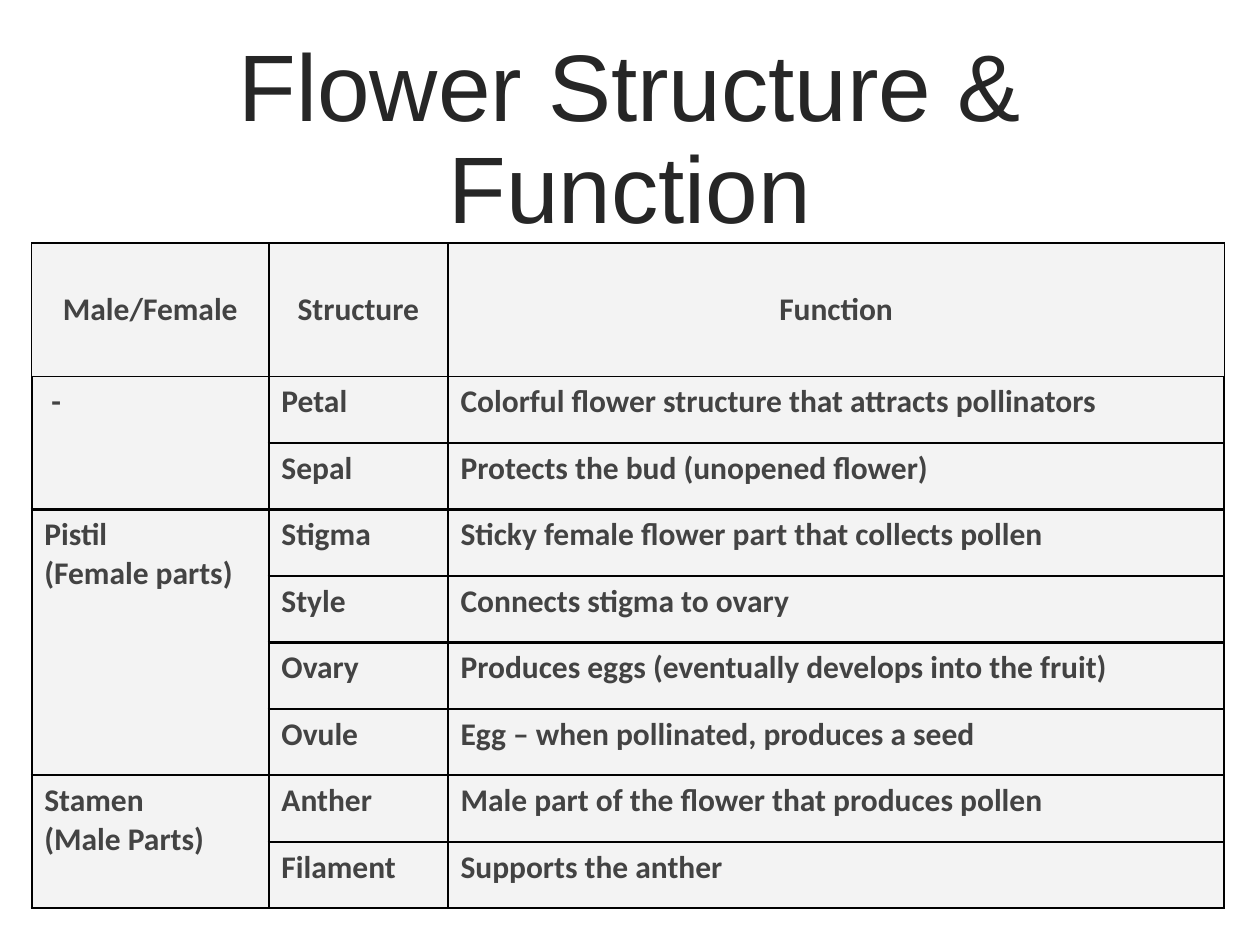
import pptx
import pptx.dml.color
import pptx.enum.text
import pptx.oxml
import pptx.oxml.ns
import pptx.util

Cm = pptx.util.Cm
Pt = pptx.util.Pt
ALIGN = pptx.enum.text.PP_ALIGN
ANCHOR = pptx.enum.text.MSO_ANCHOR

TITLE = {"name": "Arial", "size": Pt(54), "color": "262626"}
BODY = {"name": "Calibri", "size": Pt(18), "bold": True, "color": "434343"}
FILL, EDGE = "F3F3F3", "000000"
THIN, THICK = 1, 1.5

HEAD = ["Male/Female", "Structure", "Function"]
GROUPS = [
    (" -", [
        ("Petal", "Colorful flower structure that attracts pollinators"),
        ("Sepal", "Protects the bud (unopened flower)"),
    ]),
    ("Pistil\n(Female parts)", [
        ("Stigma", "Sticky female flower part that collects pollen"),
        ("Style", "Connects stigma to ovary"),
        ("Ovary", "Produces eggs (eventually develops into the fruit)"),
        ("Ovule", "Egg – when pollinated, produces a seed"),
    ]),
    ("Stamen\n(Male Parts)", [
        ("Anther", "Male part of the flower that produces pollen"),
        ("Filament", "Supports the anther"),
    ]),
]
WIDTHS = [4.78, 3.61, 15.65]
HEAD_H, ROW_H = 2.69, 1.34


def paint(target, color):
    target.rgb = pptx.dml.color.RGBColor.from_string(color)


def style(frame, font, align):
    for par in frame.paragraphs:
        par.alignment = align
        for run in par.runs:
            for key, value in font.items():
                if key == "color":
                    paint(run.font.color, value)
                else:
                    setattr(run.font, key, value)


def border(cell, widths):
    """Draw the left, right, top and bottom edges, with widths in points."""
    props = cell._tc.get_or_add_tcPr()
    for i, (side, width) in enumerate(zip("LRTB", widths)):
        props.insert(i, pptx.oxml.parse_xml(
            f'<a:ln{side} {pptx.oxml.ns.nsdecls("a")} w="{Pt(width)}">'
            f'<a:solidFill><a:srgbClr val="{EDGE}"/></a:solidFill>'
            f'</a:ln{side}>'))


def add_title(slide, text):
    title = slide.shapes.title
    place = {"left": Cm(1.75), "top": Cm(1.02),
             "width": Cm(21.9), "height": Cm(3.68)}
    for key, value in place.items():
        setattr(title, key, value)
    frame = title.text_frame
    frame.text = text
    frame.word_wrap = True
    frame.auto_size = pptx.enum.text.MSO_AUTO_SIZE.NONE
    frame.vertical_anchor = ANCHOR.MIDDLE
    frame.paragraphs[0].line_spacing = 0.9
    style(frame, TITLE, ALIGN.CENTER)


def format_cell(cell, row):
    cell.fill.solid()
    paint(cell.fill.fore_color, FILL)
    head = row == 0
    cell.vertical_anchor = ANCHOR.MIDDLE if head else ANCHOR.TOP
    style(cell.text_frame, BODY, ALIGN.CENTER if head else ALIGN.LEFT)
    side = THIN if head else THICK
    border(cell, [side, side, THIN if row < 2 else THICK, side])


def add_grid(slide):
    count = 1 + sum(len(parts) for _, parts in GROUPS)
    table = slide.shapes.add_table(
        count, len(HEAD), Cm(0.64), Cm(4.9),
        Cm(sum(WIDTHS)), Cm(HEAD_H + ROW_H * (count - 1))).table
    table.first_row = table.horz_banding = False
    for col, width in zip(table.columns, WIDTHS):
        col.width = Cm(width)
    for i, row in enumerate(table.rows):
        row.height = Cm(ROW_H if i else HEAD_H)

    for col, text in enumerate(HEAD):
        table.cell(0, col).text = text
    row = 1
    for group, parts in GROUPS:
        table.cell(row, 0).text = group
        table.cell(row, 0).merge(table.cell(row + len(parts) - 1, 0))
        for part, role in parts:
            table.cell(row, 1).text = part
            table.cell(row, 2).text = role
            row += 1

    for i in range(count):
        for col in range(len(HEAD)):
            format_cell(table.cell(i, col), i)


def main():
    deck = pptx.Presentation()
    deck.slide_width, deck.slide_height = Cm(25.4), Cm(19.05)
    slide = deck.slides.add_slide(deck.slide_layouts[5])
    add_title(slide, "Flower Structure & Function")
    add_grid(slide)
    deck.save("out.pptx")


if __name__ == "__main__":
    main()
